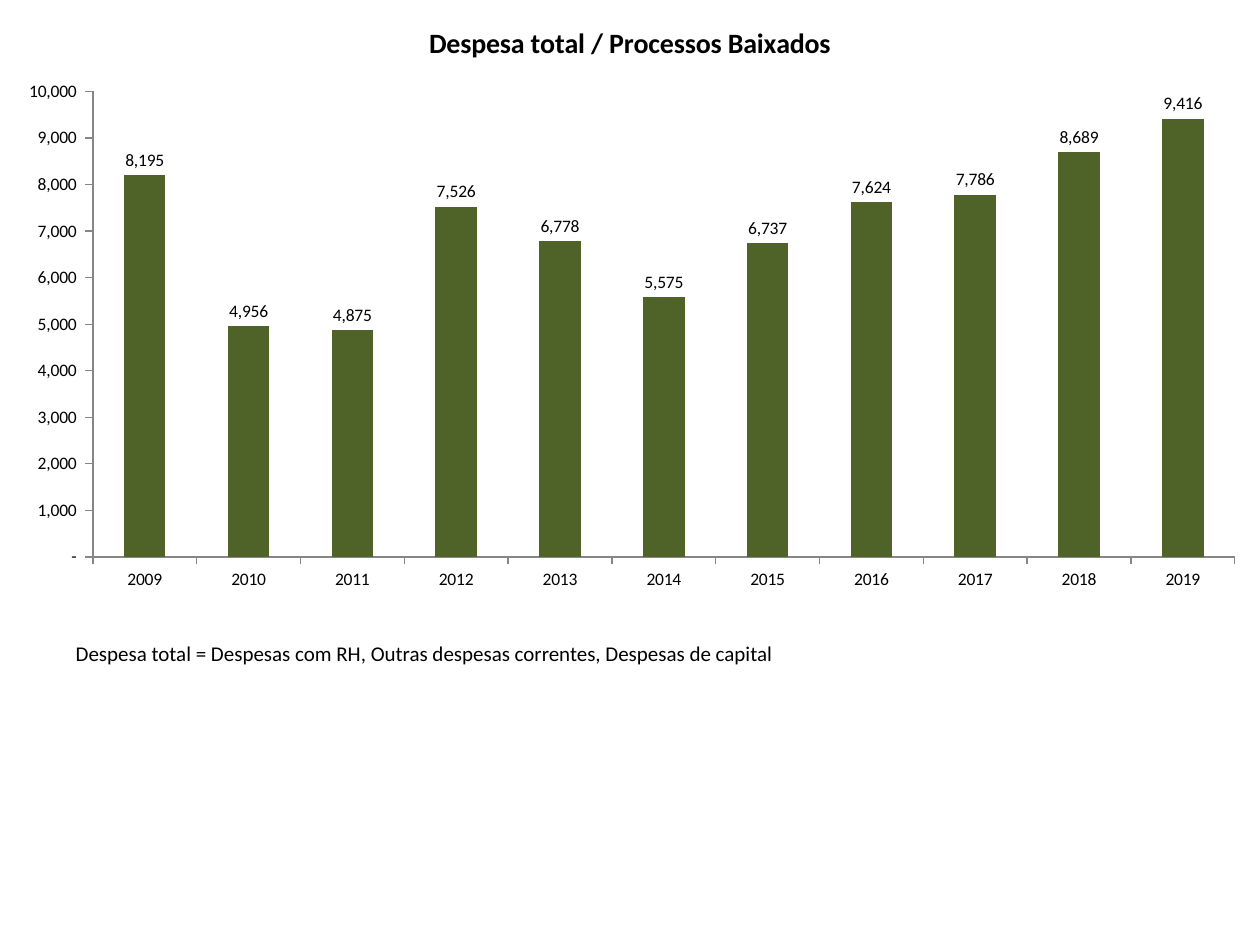
import pptx
import pptx.chart.data
import pptx.dml.color
import pptx.enum.chart
import pptx.enum.text
import pptx.util

Pt = pptx.util.Pt
enum = pptx.enum.chart

TITLE = "Despesa total / Processos Baixados"
NOTE = "Despesa total = Despesas com RH, Outras despesas correntes, Despesas de capital"
COSTS = [8195, 4956, 4875, 7526, 6778, 5575, 6737, 7624, 7786, 8689, 9416]
YEARS = [str(2009 + i) for i in range(len(COSTS))]
FONT, BLACK, GREEN, GRAY = "Calibri", "000000", "4F6228", "868686"


def tint(color, code):
    color.rgb = pptx.dml.color.RGBColor.from_string(code)


def style(font, size, bold=False):
    font.name, font.size, font.bold = FONT, Pt(size), bold
    tint(font.color, BLACK)


def add_chart(slide):
    data = pptx.chart.data.CategoryChartData()
    data.categories = YEARS
    data.add_series(TITLE, COSTS)
    chart = slide.shapes.add_chart(
        enum.XL_CHART_TYPE.COLUMN_CLUSTERED, 0, 0, Pt(720), Pt(343.5), data
    ).chart
    style(chart.font, 10)
    chart.has_legend = False
    chart.has_title = True
    frame = chart.chart_title.text_frame
    frame.text = TITLE
    style(frame.paragraphs[0].runs[0].font, 16, True)
    chart.chart_title.include_in_layout = False

    for axis in (chart.category_axis, chart.value_axis):
        axis.has_major_gridlines = False
        axis.major_tick_mark = enum.XL_TICK_MARK.OUTSIDE
        axis.minor_tick_mark = enum.XL_TICK_MARK.NONE
        axis.format.line.width = Pt(0.75)
        tint(axis.format.line.color, GRAY)
    scale = chart.value_axis
    scale.minimum_scale, scale.maximum_scale, scale.major_unit = 0, 10000, 1000
    scale.tick_labels.number_format = '_(* #,##0_);_(* \\(#,##0\\);_(* "-"_);_(@_)'
    scale.tick_labels.number_format_is_linked = False

    plot = chart.plots[0]
    plot.gap_width = 150
    plot.vary_by_categories = False
    bars = plot.series[0]
    bars.format.fill.solid()
    tint(bars.format.fill.fore_color, GREEN)
    labels = bars.data_labels
    labels.show_value = True
    labels.number_format = "#,##0"
    labels.number_format_is_linked = False
    labels.position = enum.XL_LABEL_POSITION.OUTSIDE_END
    style(labels.font, 10)


def add_note(slide):
    table = slide.shapes.add_table(1, 1, Pt(42.5), Pt(365.75), Pt(538.5), Pt(15)).table
    table.first_row = table.horz_banding = False
    cell = table.cell(0, 0)
    cell.fill.background()
    cell.margin_left = cell.margin_right = cell.margin_top = Pt(0.75)
    cell.margin_bottom = 0
    cell.vertical_anchor = pptx.enum.text.MSO_ANCHOR.BOTTOM
    cell.text_frame.text = NOTE
    style(cell.text_frame.paragraphs[0].runs[0].font, 12)


def main():
    deck = pptx.Presentation()
    deck.slide_width, deck.slide_height = Pt(720), Pt(540)
    slide = deck.slides.add_slide(deck.slide_layouts[6])
    add_chart(slide)
    add_note(slide)
    deck.save("out.pptx")


if __name__ == "__main__":
    main()
